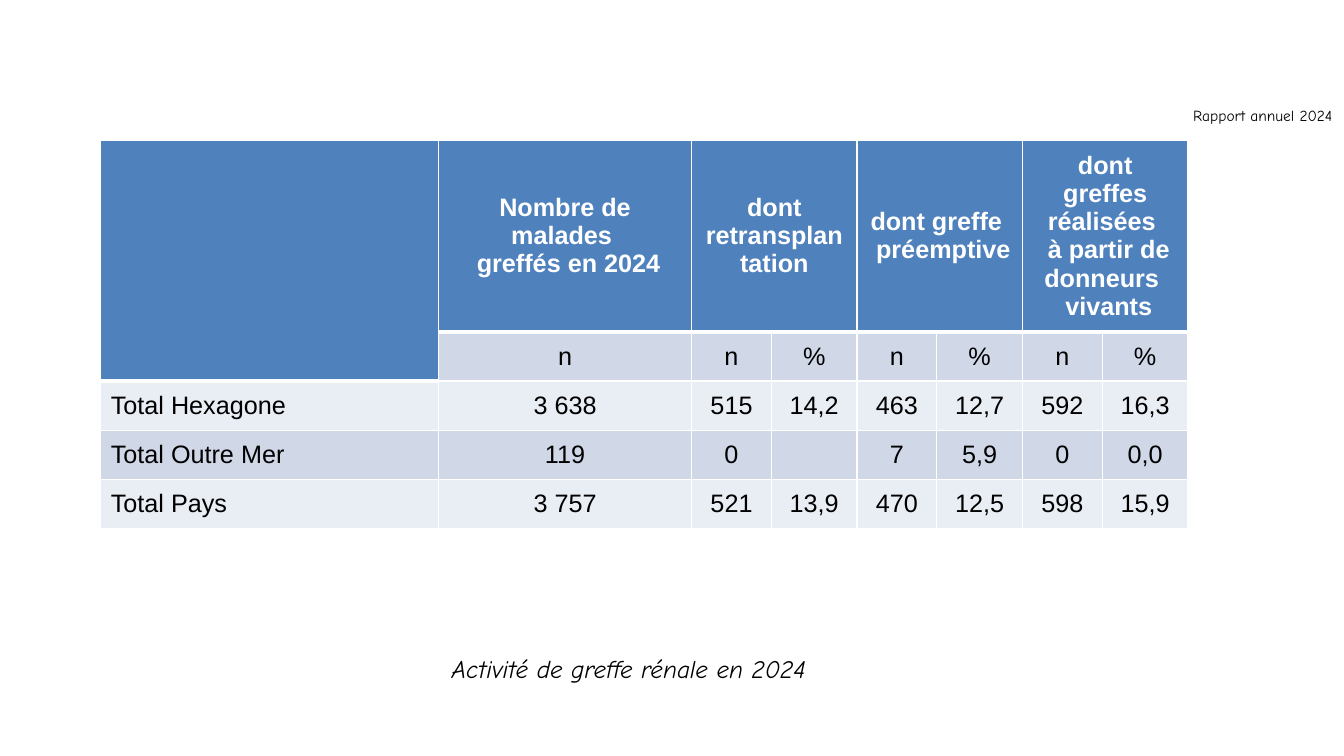
import dataclasses

import lxml.etree
import pptx
import pptx.dml.color
import pptx.enum.text
import pptx.oxml.ns
import pptx.presentation
import pptx.slide
import pptx.table
import pptx.util
from pptx.util import Cm


@dataclasses.dataclass(frozen=True)
class Theme:
    ink: str = "000000"
    white: str = "FFFFFF"
    header: str = "4F81BD"
    band_dark: str = "D0D8E8"
    band_light: str = "E9EDF4"
    table_font: str = "Arial"
    note_font: str = "Comic Neue"
    body_size: float = 18
    note_size: float = 11
    thin_line: float = 1
    thick_line: float = 3


@dataclasses.dataclass(frozen=True)
class Label:
    text: str
    left: float
    top: float
    width: float
    height: float
    size: float
    italic: bool
    wrap: bool


@dataclasses.dataclass(frozen=True)
class HeaderGroup:
    lines: tuple[str, ...]
    column: int
    span: int


THEME = Theme()

LABELS = [
    Label("Rapport annuel 2024", 29.82, 2.54, 4.02, 0.74, THEME.note_size, False, False),
    Label("Activité de greffe rénale en 2024", 11.13, 16.33, 11.61, 1.02, THEME.body_size, True, True),
]

HEADERS = [
    HeaderGroup(("Nombre de malades ", " greffés en 2024"), 1, 1),
    HeaderGroup(("dont", "retransplantation"), 2, 2),
    HeaderGroup(("dont greffe ", " préemptive"), 4, 2),
    HeaderGroup(("dont greffes réalisées ", " à partir de donneurs ", " vivants"), 6, 2),
]

BODY_ROWS = [
    ["", "n", "n", "%", "n", "%", "n", "%"],
    ["Total Hexagone", "3 638", "515", "14,2", "463", "12,7", "592", "16,3"],
    ["Total Outre Mer", "119", "0", "", "7", "5,9", "0", "0,0"],
    ["Total Pays", "3 757", "521", "13,9", "470", "12,5", "598", "15,9"],
]

COLUMN_WIDTHS = [8.51, 6.38] + [2.01, 2.16] * 3
ROW_HEIGHTS = [4.83] + [1.24] * len(BODY_ROWS)


def colour(code: str) -> pptx.dml.color.RGBColor:
    return pptx.dml.color.RGBColor.from_string(code)


def write(frame, lines: tuple[str, ...], font_name: str, size: float, ink: str,
          centred: bool = False, bold: bool = False, italic: bool = False) -> None:
    for index, line in enumerate(lines):
        para = frame.paragraphs[0] if index == 0 else frame.add_paragraph()
        alignment = pptx.enum.text.PP_ALIGN
        para.alignment = alignment.CENTER if centred else alignment.LEFT
        span = para.add_run()
        span.text = line
        span.font.name = font_name
        span.font.size = pptx.util.Pt(size)
        span.font.bold = bold
        span.font.italic = italic
        span.font.color.rgb = colour(ink)


def add_label(page: pptx.slide.Slide, label: Label) -> None:
    box = page.shapes.add_textbox(Cm(label.left), Cm(label.top), Cm(label.width), Cm(label.height))
    box.text_frame.word_wrap = label.wrap
    box.text_frame.auto_size = pptx.enum.text.MSO_AUTO_SIZE.SHAPE_TO_FIT_TEXT
    write(box.text_frame, (label.text,), THEME.note_font, label.size, THEME.ink, italic=label.italic)


def add_borders(cell: pptx.table._Cell, row: int, column: int) -> None:
    last_header_row = 1 if column == 0 else 0
    thick_edges = {"lnB": row <= last_header_row, "lnT": row == last_header_row + 1}
    properties = cell._tc.get_or_add_tcPr()
    for edge in ("lnL", "lnR", "lnT", "lnB"):
        width = THEME.thick_line if thick_edges.get(edge) else THEME.thin_line
        line = lxml.etree.SubElement(properties, pptx.oxml.ns.qn(f"a:{edge}"), w=str(pptx.util.Pt(width)))
        fill = lxml.etree.SubElement(line, pptx.oxml.ns.qn("a:solidFill"))
        lxml.etree.SubElement(fill, pptx.oxml.ns.qn("a:srgbClr"), val=THEME.white)


def style_cell(cell: pptx.table._Cell, row: int, column: int) -> None:
    add_borders(cell, row, column)
    is_header = row == 0 or (row == 1 and column == 0)
    band = THEME.band_dark if row % 2 else THEME.band_light
    cell.fill.solid()
    cell.fill.fore_color.rgb = colour(THEME.header if is_header else band)
    cell.vertical_anchor = pptx.enum.text.MSO_ANCHOR.MIDDLE


def add_transplant_table(page: pptx.slide.Slide) -> None:
    table = page.shapes.add_table(
        len(ROW_HEIGHTS), len(COLUMN_WIDTHS), Cm(2.54), Cm(3.53),
        Cm(sum(COLUMN_WIDTHS)), Cm(sum(ROW_HEIGHTS)),
    ).table
    table.first_row = False
    table.horz_banding = False
    for column, width in zip(table.columns, COLUMN_WIDTHS):
        column.width = Cm(width)
    for row, height in zip(table.rows, ROW_HEIGHTS):
        row.height = Cm(height)
    for row in range(len(ROW_HEIGHTS)):
        for column in range(len(COLUMN_WIDTHS)):
            style_cell(table.cell(row, column), row, column)

    table.cell(0, 0).merge(table.cell(1, 0))
    for group in HEADERS:
        cell = table.cell(0, group.column)
        if group.span > 1:
            cell.merge(table.cell(0, group.column + group.span - 1))
        write(cell.text_frame, group.lines, THEME.table_font, THEME.body_size, THEME.white,
              centred=True, bold=True)
    for row, values in enumerate(BODY_ROWS, start=1):
        for column, value in enumerate(values):
            if value:
                write(table.cell(row, column).text_frame, (value,), THEME.table_font,
                      THEME.body_size, THEME.ink, centred=column > 0)


def main() -> None:
    deck: pptx.presentation.Presentation = pptx.Presentation()
    deck.slide_width = Cm(33.87)
    deck.slide_height = Cm(19.05)
    page = deck.slides.add_slide(deck.slide_layouts.get_by_name("Blank"))
    for label in LABELS:
        add_label(page, label)
    add_transplant_table(page)
    deck.save("out.pptx")


if __name__ == "__main__":
    main()
